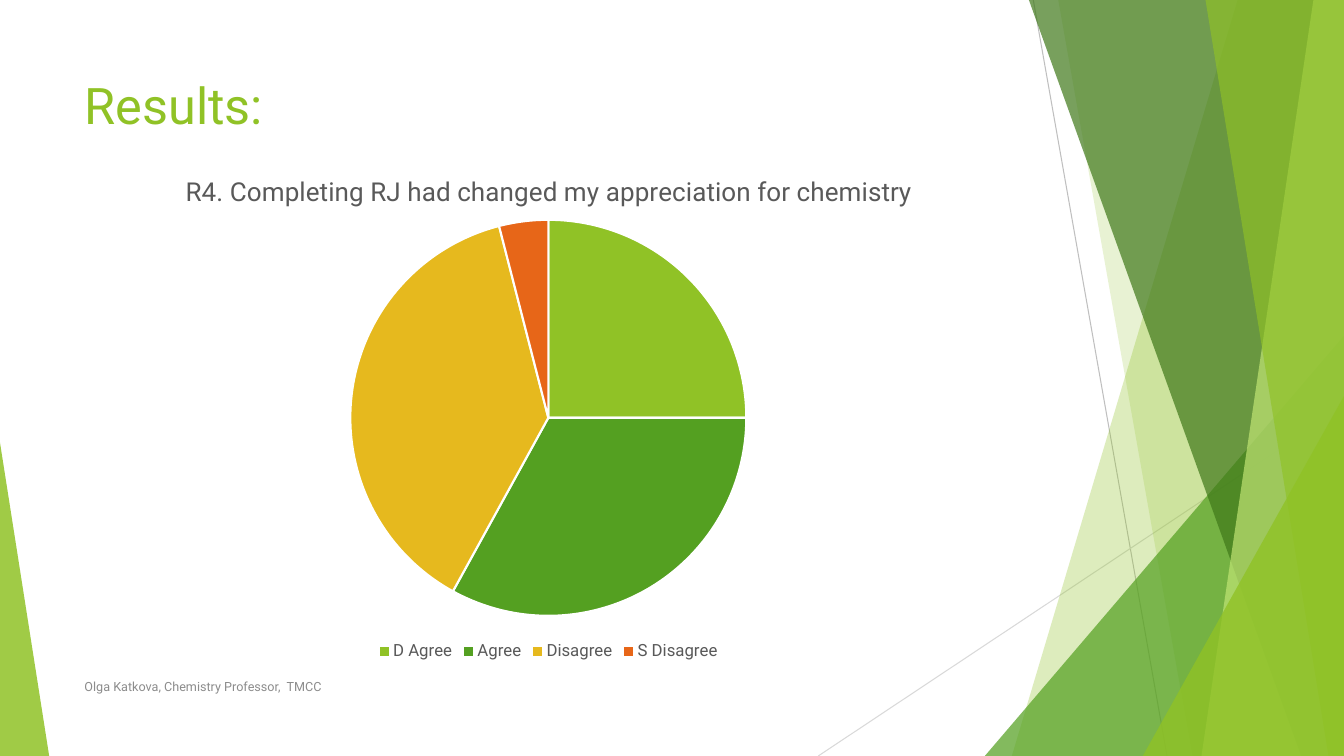
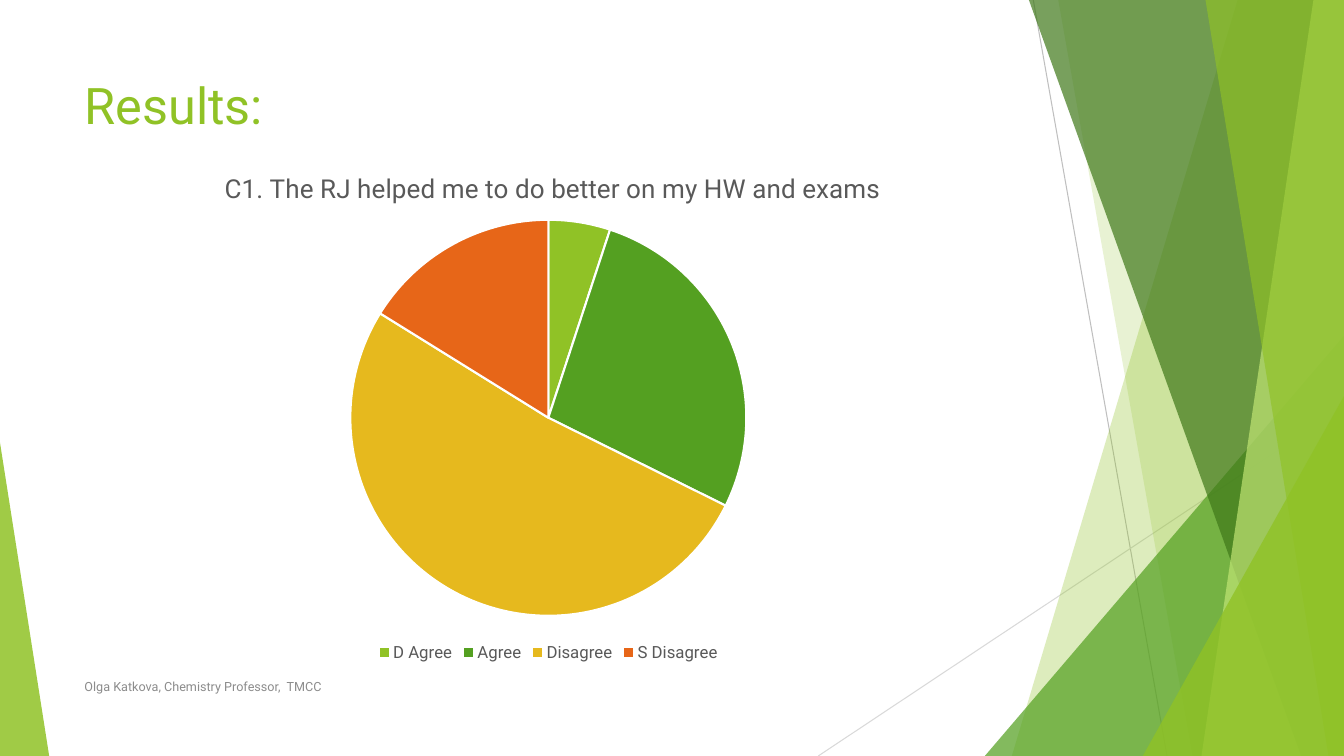
from dataclasses import dataclass

from lxml import etree
from pptx import Presentation
from pptx.chart.data import CategoryChartData
from pptx.dml.color import RGBColor
from pptx.enum.chart import XL_CHART_TYPE, XL_LEGEND_POSITION
from pptx.enum.shapes import MSO_CONNECTOR, MSO_SHAPE
from pptx.enum.text import MSO_ANCHOR, PP_ALIGN
from pptx.oxml import parse_xml
from pptx.oxml.ns import nsdecls, qn
from pptx.util import Cm, Pt

PIE = XL_CHART_TYPE.PIE
LEGEND_BOTTOM = XL_LEGEND_POSITION.BOTTOM
STRAIGHT = MSO_CONNECTOR.STRAIGHT
TRIANGLE = MSO_SHAPE.ISOSCELES_TRIANGLE
MIDDLE = MSO_ANCHOR.MIDDLE
LEFT = PP_ALIGN.LEFT

SLIDE_WIDTH = 33.87
SLIDE_HEIGHT = 19.05
MARGIN = 1.88
CONTENT_WIDTH = 23.88
PIE_DIAMETER = 9.98
PIE_TOP = 5.54
TITLE_ONLY_LAYOUT = 5


@dataclass(frozen=True)
class Theme:
    font: str = "Roboto"
    lime: str = "90C226"
    green: str = "54A021"
    forest: str = "3F7819"
    pale_lime: str = "C0E474"
    gold: str = "E6B91E"
    orange: str = "E76618"
    white: str = "FFFFFF"
    chart_text: str = "595959"
    footer_text: str = "8C8C8C"
    dark_rule: str = "BFBFBF"
    light_rule: str = "D9D9D9"
    title_size: float = 36
    chart_title_size: float = 18.6
    legend_size: float = 12
    footer_size: float = 9


THEME = Theme()
SLICE_COLORS = (THEME.lime, THEME.green, THEME.gold, THEME.orange)
CATEGORIES = ("D Agree", "Agree", "Disagree", "S Disagree")


@dataclass(frozen=True)
class Rule:
    start: tuple[float, float]
    end: tuple[float, float]
    color: str


@dataclass(frozen=True)
class Band:
    top_left: float
    bottom_left: float
    color: str
    opacity: int


@dataclass(frozen=True)
class Wedge:
    left: float
    top: float
    width: float
    apex: int
    color: str
    opacity: int


@dataclass(frozen=True)
class Survey:
    question: str
    values: tuple[int, ...]
    chart_top: float
    chart_height: float
    question_left: float
    question_top: float


RULES = (
    Rule((26.04, 0), (29.41, SLIDE_HEIGHT), THEME.dark_rule),
    Rule((SLIDE_WIDTH, 10.24), (20.62, SLIDE_HEIGHT), THEME.light_rule),
)
FACETS = (
    Band(31.19, 25.5, THEME.lime, 30),
    Band(26.67, 30.05, THEME.lime, 20),
    Wedge(24.82, 8.46, 9.05, 1, THEME.green, 72),
    Band(25.93, 32.79, THEME.forest, 70),
    Band(33.1, 30.28, THEME.pale_lime, 70),
    Band(30.38, 33.48, THEME.lime, 65),
    Wedge(28.8, 9.98, 5.07, 1, THEME.lime, 80),
    Wedge(0, 11.15, 1.24, 0, THEME.lime, 85),
)
SURVEYS = (
    Survey("R4. Completing RJ had changed my appreciation for chemistry",
           (25, 33, 38, 4), 3.76, 13, 4.56, 4.28),
    Survey("C1. The RJ helped me to do better on my HW and exams",
           (5, 27, 51, 16), 3.63, 13.16, 5.54, 4.2),
)


def rgb(color: str) -> RGBColor:
    return RGBColor.from_string(color)


def style_font(font, size: float, color: str) -> None:
    font.name = THEME.font
    font.size = Pt(size)
    font.bold = False
    font.color.rgb = rgb(color)


def style_facet(shape, facet: Band | Wedge) -> None:
    shape.shadow.inherit = False
    shape.line.fill.background()
    shape.fill.solid()
    shape.fill.fore_color.rgb = rgb(facet.color)
    color = shape.fill._xPr.find(qn("a:solidFill"))[0]
    etree.SubElement(color, qn("a:alpha"), val=str(facet.opacity * 1000))


def add_rule(slide, rule: Rule) -> None:
    connector = slide.shapes.add_connector(
        STRAIGHT, *map(Cm, rule.start), *map(Cm, rule.end))
    connector.line.color.rgb = rgb(rule.color)
    connector.line.width = Pt(0.75)
    etree.SubElement(connector._element.spPr, qn("a:effectLst"))


def add_band(slide, band: Band) -> None:
    builder = slide.shapes.build_freeform(Cm(band.top_left), 0)
    builder.add_line_segments([
        (Cm(SLIDE_WIDTH), 0),
        (Cm(SLIDE_WIDTH), Cm(SLIDE_HEIGHT)),
        (Cm(band.bottom_left), Cm(SLIDE_HEIGHT)),
    ])
    style_facet(builder.convert_to_shape(), band)


def add_wedge(slide, wedge: Wedge) -> None:
    shape = slide.shapes.add_shape(
        TRIANGLE, Cm(wedge.left), Cm(wedge.top),
        Cm(wedge.width), Cm(SLIDE_HEIGHT - wedge.top))
    shape.adjustments[0] = wedge.apex
    style_facet(shape, wedge)


def add_backdrop(slide) -> None:
    for rule in RULES:
        add_rule(slide, rule)
    for facet in FACETS:
        if isinstance(facet, Band):
            add_band(slide, facet)
        else:
            add_wedge(slide, facet)


def set_title(slide, text: str) -> None:
    title = slide.shapes.title
    title.left, title.top = Cm(MARGIN), Cm(1.7)
    title.width, title.height = Cm(CONTENT_WIDTH), Cm(1.88)
    title.text_frame.text = text
    title.text_frame.vertical_anchor = MIDDLE
    paragraph = title.text_frame.paragraphs[0]
    paragraph.alignment = LEFT
    style_font(paragraph.font, THEME.title_size, THEME.lime)


def add_footer(slide, text: str) -> None:
    box = slide.shapes.add_textbox(Cm(MARGIN), Cm(16.79), Cm(17.5), Cm(1.02))
    box.text_frame.word_wrap = True
    box.text_frame.vertical_anchor = MIDDLE
    box.text_frame.text = text
    style_font(box.text_frame.paragraphs[0].font, THEME.footer_size, THEME.footer_text)


def manual_layout(**settings: float | str):
    entries = "".join(f'<c:{name} val="{value}"/>' for name, value in settings.items())
    return parse_xml(
        f'<c:layout {nsdecls("c")}><c:manualLayout>{entries}</c:manualLayout></c:layout>')


def place_chart_parts(chart, survey: Survey) -> None:
    title = chart.chart_title._element
    plot_area = chart._chartSpace.chart.plotArea
    for element in (title, plot_area):
        for layout in element.findall(qn("c:layout")):
            element.remove(layout)
    title.find(qn("c:tx")).addnext(manual_layout(
        xMode="edge", yMode="edge",
        x=round((survey.question_left - MARGIN) / CONTENT_WIDTH, 4),
        y=round((survey.question_top - survey.chart_top) / survey.chart_height, 4)))
    plot_area.insert(0, manual_layout(
        layoutTarget="inner", xMode="edge", yMode="edge",
        x=round((1 - PIE_DIAMETER / CONTENT_WIDTH) / 2, 4),
        y=round((PIE_TOP - survey.chart_top) / survey.chart_height, 4),
        w=round(PIE_DIAMETER / CONTENT_WIDTH, 4),
        h=round(PIE_DIAMETER / survey.chart_height, 4)))


def add_survey_chart(slide, survey: Survey) -> None:
    data = CategoryChartData()
    data.categories = CATEGORIES
    data.add_series(survey.question, survey.values)
    chart = slide.shapes.add_chart(
        PIE, Cm(MARGIN), Cm(survey.chart_top),
        Cm(CONTENT_WIDTH), Cm(survey.chart_height), data).chart
    style_font(chart.font, THEME.legend_size, THEME.chart_text)

    chart.has_title = True
    chart.chart_title.include_in_layout = False
    chart.chart_title.text_frame.text = survey.question
    style_font(chart.chart_title.text_frame.paragraphs[0].font,
               THEME.chart_title_size, THEME.chart_text)

    chart.has_legend = True
    chart.legend.position = LEGEND_BOTTOM
    chart.legend.include_in_layout = False
    style_font(chart.legend.font, THEME.legend_size, THEME.chart_text)

    plot = chart.plots[0]
    plot.vary_by_categories = True
    for index, color in enumerate(SLICE_COLORS):
        slice_format = plot.series[0].points[index].format
        slice_format.fill.solid()
        slice_format.fill.fore_color.rgb = rgb(color)
        slice_format.line.color.rgb = rgb(THEME.white)
        slice_format.line.width = Pt(1.5)
    place_chart_parts(chart, survey)


def main() -> None:
    presentation = Presentation()
    presentation.slide_width = Cm(SLIDE_WIDTH)
    presentation.slide_height = Cm(SLIDE_HEIGHT)
    for survey in SURVEYS:
        slide = presentation.slides.add_slide(
            presentation.slide_layouts[TITLE_ONLY_LAYOUT])
        add_backdrop(slide)
        set_title(slide, "Results:")
        add_survey_chart(slide, survey)
        add_footer(slide, "Olga Katkova, Chemistry Professor,  TMCC")
    presentation.save("out.pptx")


if __name__ == "__main__":
    main()
